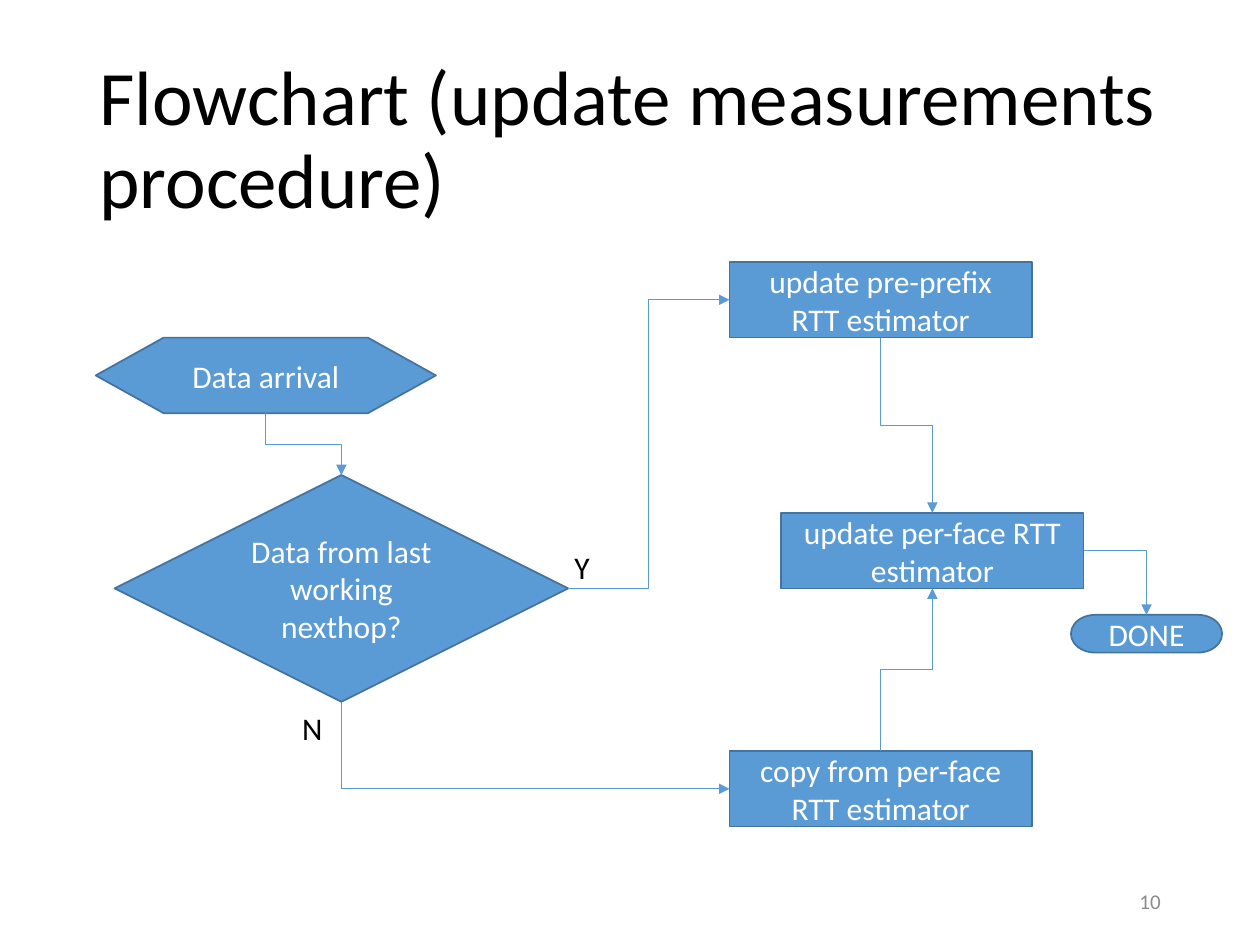
from dataclasses import dataclass

from lxml.etree import SubElement
from pptx import Presentation
from pptx.dml.color import RGBColor
from pptx.enum.shapes import MSO_CONNECTOR, MSO_SHAPE
from pptx.enum.text import MSO_ANCHOR, MSO_AUTO_SIZE, PP_ALIGN
from pptx.oxml.ns import qn
from pptx.util import Inches, Pt

TOP, LEFT, BOTTOM, RIGHT = range(4)


@dataclass(frozen=True)
class Theme:
    font: str = "Calibri"
    fill: RGBColor = RGBColor(0x5B, 0x9B, 0xD5)
    outline: RGBColor = RGBColor(0x43, 0x73, 0x9E)
    light: RGBColor = RGBColor(0xFF, 0xFF, 0xFF)
    dark: RGBColor = RGBColor(0, 0, 0)
    muted: RGBColor = RGBColor(0x8C, 0x8C, 0x8C)
    title_size: int = 44
    body_size: int = 18
    number_size: int = 12


class FlowchartSlide:
    def __init__(self, presentation, theme):
        self.theme = theme
        self.slide = presentation.slides.add_slide(presentation.slide_layouts[5])

    def set_text(self, shape, text, size, color, align, anchor=MSO_ANCHOR.MIDDLE):
        frame = shape.text_frame
        frame.text = text
        frame.vertical_anchor = anchor
        paragraph = frame.paragraphs[0]
        paragraph.alignment = align
        font = paragraph.runs[0].font
        font.name = self.theme.font
        font.size = Pt(size)
        font.color.rgb = color
        return paragraph

    def title(self, text, left, top, width, height):
        shape = self.slide.shapes.title
        shape.left, shape.top = Inches(left), Inches(top)
        shape.width, shape.height = Inches(width), Inches(height)
        shape.text_frame.auto_size = MSO_AUTO_SIZE.NONE
        paragraph = self.set_text(
            shape, text, self.theme.title_size, self.theme.dark, PP_ALIGN.LEFT)
        paragraph.line_spacing = 0.9

    def node(self, kind, text, left, top, width, height):
        shape = self.slide.shapes.add_shape(
            kind, Inches(left), Inches(top), Inches(width), Inches(height))
        shape.shadow.inherit = False
        shape.fill.solid()
        shape.fill.fore_color.rgb = self.theme.fill
        shape.line.color.rgb = self.theme.outline
        shape.line.width = Pt(1)
        self.set_text(shape, text, self.theme.body_size, self.theme.light, PP_ALIGN.CENTER)
        return shape

    def text_box(self, left, top, width, height):
        return self.slide.shapes.add_textbox(
            Inches(left), Inches(top), Inches(width), Inches(height))

    def label(self, text, left, top, width):
        box = self.text_box(left, top, width, 0.4)
        box.text_frame.word_wrap = False
        box.text_frame.auto_size = MSO_AUTO_SIZE.SHAPE_TO_FIT_TEXT
        self.set_text(
            box, text, self.theme.body_size, self.theme.dark, PP_ALIGN.LEFT, MSO_ANCHOR.TOP)

    def page_number(self, text, left, top, width, height):
        box = self.text_box(left, top, width, height)
        box.text_frame.word_wrap = True
        self.set_text(box, text, self.theme.number_size, self.theme.muted, PP_ALIGN.RIGHT)

    def arrow(self, source, source_side, target, target_side):
        connector = self.slide.shapes.add_connector(MSO_CONNECTOR.ELBOW, 0, 0, 0, 0)
        connector.begin_connect(source, source_side)
        connector.end_connect(target, target_side)
        connector.line.color.rgb = self.theme.fill
        connector.line.width = Pt(0.5)
        properties = connector.element.spPr
        SubElement(properties.find(qn("a:ln")), qn("a:tailEnd"), type="triangle")
        SubElement(properties, qn("a:effectLst"))
        if source_side % 2 != target_side % 2:
            properties.find(qn("a:prstGeom")).set("prst", "bentConnector2")
        if source_side in (TOP, BOTTOM):
            self.turn_upright(connector, properties.find(qn("a:xfrm")))

    def turn_upright(self, connector, transform):
        across = connector.end_x - connector.begin_x
        down = connector.end_y - connector.begin_y
        center_x = (connector.begin_x + connector.end_x) // 2
        center_y = (connector.begin_y + connector.end_y) // 2
        connector.width, connector.height = abs(down), abs(across)
        connector.left = center_x - connector.width // 2
        connector.top = center_y - connector.height // 2
        transform.set("rot", str((90 if down > 0 else 270) * 60000))
        transform.set("flipH", "0")
        transform.set("flipV", "1" if (across > 0) == (down > 0) else "0")


def main():
    presentation = Presentation()
    presentation.slide_width, presentation.slide_height = Inches(10), Inches(7.5)
    chart = FlowchartSlide(presentation, Theme())
    chart.title("Flowchart (update measurements procedure)", 0.69, 0.4, 8.62, 1.45)

    process = MSO_SHAPE.FLOWCHART_PROCESS
    arrival = chart.node(MSO_SHAPE.FLOWCHART_PREPARATION, "Data arrival", 0.76, 2.68, 2.7, 0.6)
    decision = chart.node(
        MSO_SHAPE.FLOWCHART_DECISION, "Data from last working nexthop?", 0.91, 3.77, 3.6, 1.8)
    prefix = chart.node(process, "update pre-prefix RTT estimator", 5.79, 2.08, 2.4, 0.6)
    copied = chart.node(process, "copy from per-face RTT estimator", 5.79, 5.96, 2.4, 0.6)
    face = chart.node(process, "update per-face RTT estimator", 6.2, 4.07, 2.4, 0.6)
    done = chart.node(MSO_SHAPE.FLOWCHART_TERMINATOR, "DONE", 8.5, 4.88, 1.2, 0.3)

    for link in (
        (arrival, BOTTOM, decision, TOP),
        (decision, RIGHT, prefix, LEFT),
        (decision, BOTTOM, copied, LEFT),
        (prefix, BOTTOM, face, TOP),
        (copied, TOP, face, BOTTOM),
        (face, RIGHT, done, TOP),
    ):
        chart.arrow(*link)

    chart.label("Y", 4.46, 4.3, 0.32)
    chart.label("N", 2.3, 5.58, 0.36)
    chart.page_number("10", 7.06, 6.95, 2.25, 0.4)
    presentation.save("out.pptx")


if __name__ == "__main__":
    main()
